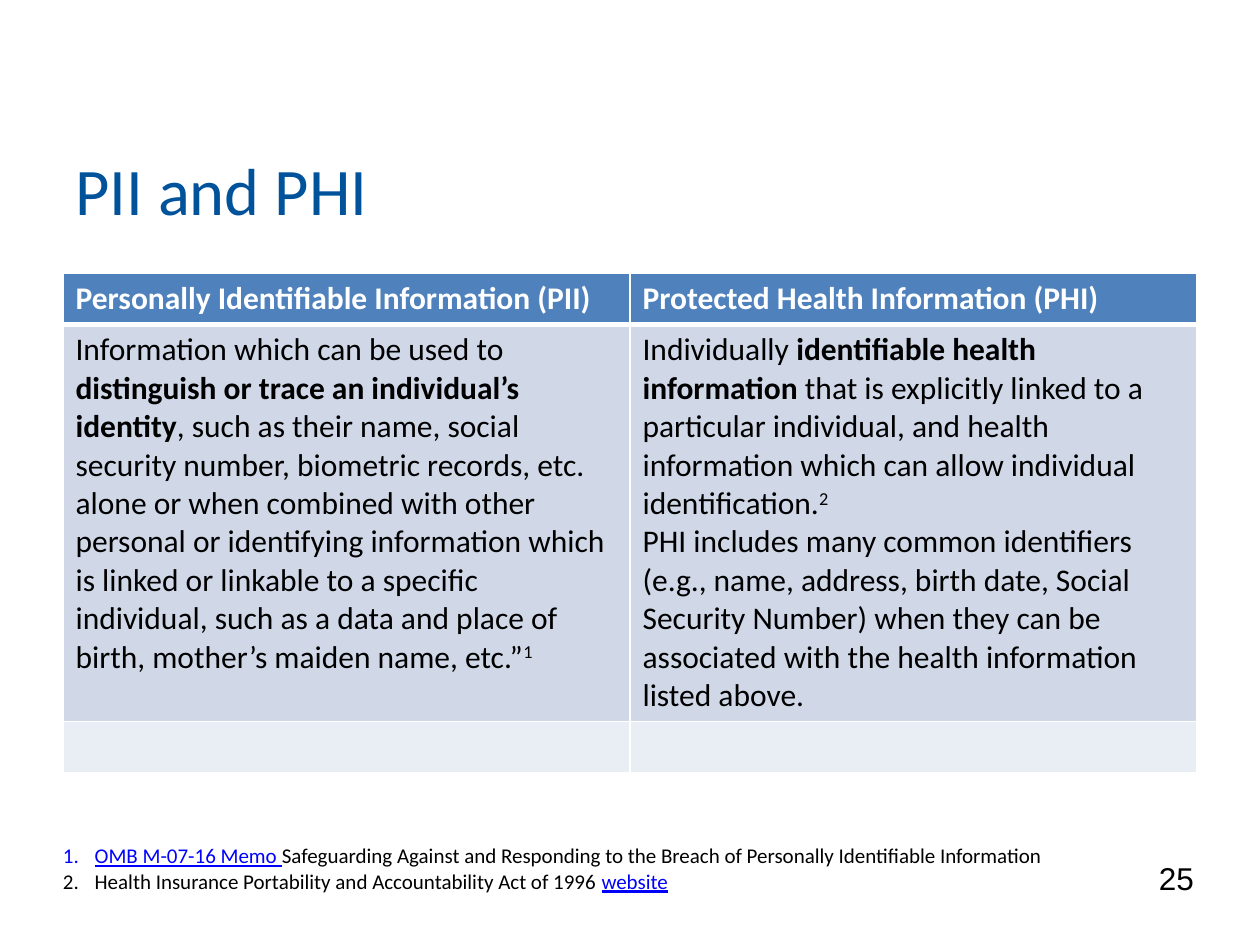
from lxml import etree
from pptx import Presentation
from pptx.dml.color import RGBColor
from pptx.enum.text import MSO_ANCHOR
from pptx.oxml.ns import qn
from pptx.util import Cm, Pt

MIDDLE = MSO_ANCHOR.MIDDLE
TOP = MSO_ANCHOR.TOP
BLANK_LAYOUT = 6

COLORS = {
    "title": "00529B",
    "header": "4F81BD",
    "body": "D0D8E8",
    "empty": "E9EDF4",
    "link": "0000FF",
    "black": "000000",
    "white": "FFFFFF",
}


def add_run(paragraph, text, size=18, font="Calibri", color="black",
            bold=False, underline=False, superscript=False):
    """Append formatted text to a paragraph."""
    run = paragraph.add_run()
    run.text = text
    run.font.size = Pt(size)
    run.font.name = font
    run.font.color.rgb = RGBColor.from_string(COLORS[color])
    run.font.bold = bold
    run.font.underline = underline
    if superscript:
        run._r.get_or_add_rPr().set("baseline", "30000")


class SlideBuilder:
    """Holds the style and the current slide."""

    border_color = COLORS["white"]
    border_width = 1
    header_border_width = 3
    number_indent = Cm(0.64)

    def __init__(self, slide):
        self.slide = slide

    def fill_frame(self, text_frame, paragraphs, **style):
        """Write paragraphs, each a list of (text, format) pairs."""
        for index, runs in enumerate(paragraphs):
            paragraph = (text_frame.add_paragraph() if index
                         else text_frame.paragraphs[0])
            for text, run_format in runs:
                add_run(paragraph, text, **{**style, **run_format})

    def add_text(self, left, top, width, height, paragraphs,
                 anchor=TOP, numbered=False, **style):
        shape = self.slide.shapes.add_textbox(
            Cm(left), Cm(top), Cm(width), Cm(height))
        text_frame = shape.text_frame
        text_frame.word_wrap = True
        text_frame.vertical_anchor = anchor
        self.fill_frame(text_frame, paragraphs, **style)
        if numbered:
            for paragraph in text_frame.paragraphs:
                self.number_paragraph(paragraph)

    def number_paragraph(self, paragraph):
        properties = paragraph._p.get_or_add_pPr()
        properties.set("marL", str(self.number_indent))
        properties.set("indent", str(-self.number_indent))
        etree.SubElement(properties, qn("a:buAutoNum"), type="arabicPeriod")

    def set_borders(self, cell, **widths):
        properties = cell._tc.get_or_add_tcPr()
        for index, side in enumerate("LRTB"):
            width = widths.get(side, self.border_width)
            line = etree.Element(qn(f"a:ln{side}"), w=str(Pt(width)))
            fill = etree.SubElement(line, qn("a:solidFill"))
            etree.SubElement(fill, qn("a:srgbClr"), val=self.border_color)
            properties.insert(index, line)

    def add_table(self, left, top, width, row_heights, rows, fills):
        column_count = len(rows[0])
        table = self.slide.shapes.add_table(
            len(rows), column_count, Cm(left), Cm(top),
            Cm(width), Cm(sum(row_heights))).table
        for column in table.columns:
            column.width = Cm(width / column_count)
        for row_index, row in enumerate(rows):
            table.rows[row_index].height = Cm(row_heights[row_index])
            for column_index, paragraphs in enumerate(row):
                cell = table.cell(row_index, column_index)
                cell.fill.solid()
                cell.fill.fore_color.rgb = RGBColor.from_string(
                    COLORS[fills[row_index]])
                self.fill_frame(cell.text_frame, paragraphs)
                # The rule under the header is heavier
                heavy = {0: "B", 1: "T"}.get(row_index)
                self.set_borders(
                    cell, **({heavy: self.header_border_width} if heavy else {}))


HEADING = {"color": "white", "bold": True}
BOLD = {"bold": True}
SUPERSCRIPT = {"superscript": True}
LINK = {"color": "link", "underline": True}

PII_TEXT = [[
    ("Information which can be used to ", {}),
    ("distinguish or trace an individual’s identity", BOLD),
    (", such as their name, social security number, biometric records, etc. "
     "alone or when combined with other personal or identifying information "
     "which is linked or linkable to a specific individual, such as a data "
     "and place of birth, mother’s maiden name, etc.”", {}),
    ("1", SUPERSCRIPT),
]]
PHI_TEXT = [
    [
        ("Individually ", {}),
        ("identifiable health information ", BOLD),
        ("that is explicitly linked to a particular individual, and health "
         "information which can allow individual identification.", {}),
        ("2", SUPERSCRIPT),
    ],
    [("PHI includes many common identifiers (e.g., name, address, birth date, "
      "Social Security Number) when they can be associated with the health "
      "information listed above.", {})],
]
TABLE_ROWS = [
    [[[("Personally Identifiable Information (PII)", HEADING)]],
     [[("Protected Health Information (PHI)", HEADING)]]],
    [PII_TEXT, PHI_TEXT],
    [[], []],
]
FOOTNOTES = [
    [("OMB M-07-16 Memo ", LINK),
     ("Safeguarding Against and Responding to the Breach of Personally "
      "Identifiable Information", {})],
    [("Health Insurance Portability and Accountability Act of 1996 ", {}),
     ("website", LINK)],
]


def main():
    presentation = Presentation()
    presentation.slide_width = Cm(25.4)
    presentation.slide_height = Cm(19.05)
    layout = presentation.slide_layouts[BLANK_LAYOUT]
    builder = SlideBuilder(presentation.slides.add_slide(layout))

    # Title
    builder.add_text(1.27, 2.95, 22.86, 1.7, [[("PII and PHI", {})]],
                     anchor=MIDDLE, size=38, color="title")

    # Comparison table
    builder.add_table(1.27, 5.51, 22.86, [1.03, 8, 1.03], TABLE_ROWS,
                      ["header", "body", "empty"])

    # Slide number
    builder.add_text(23.11, 17.2, 2.06, 0.97, [[("25", {})]], font="Arial")

    # Footnotes
    builder.add_text(1.02, 16.87, 20.45, 1.27, FOOTNOTES,
                     numbered=True, size=12)

    presentation.save("out.pptx")


if __name__ == "__main__":
    main()
